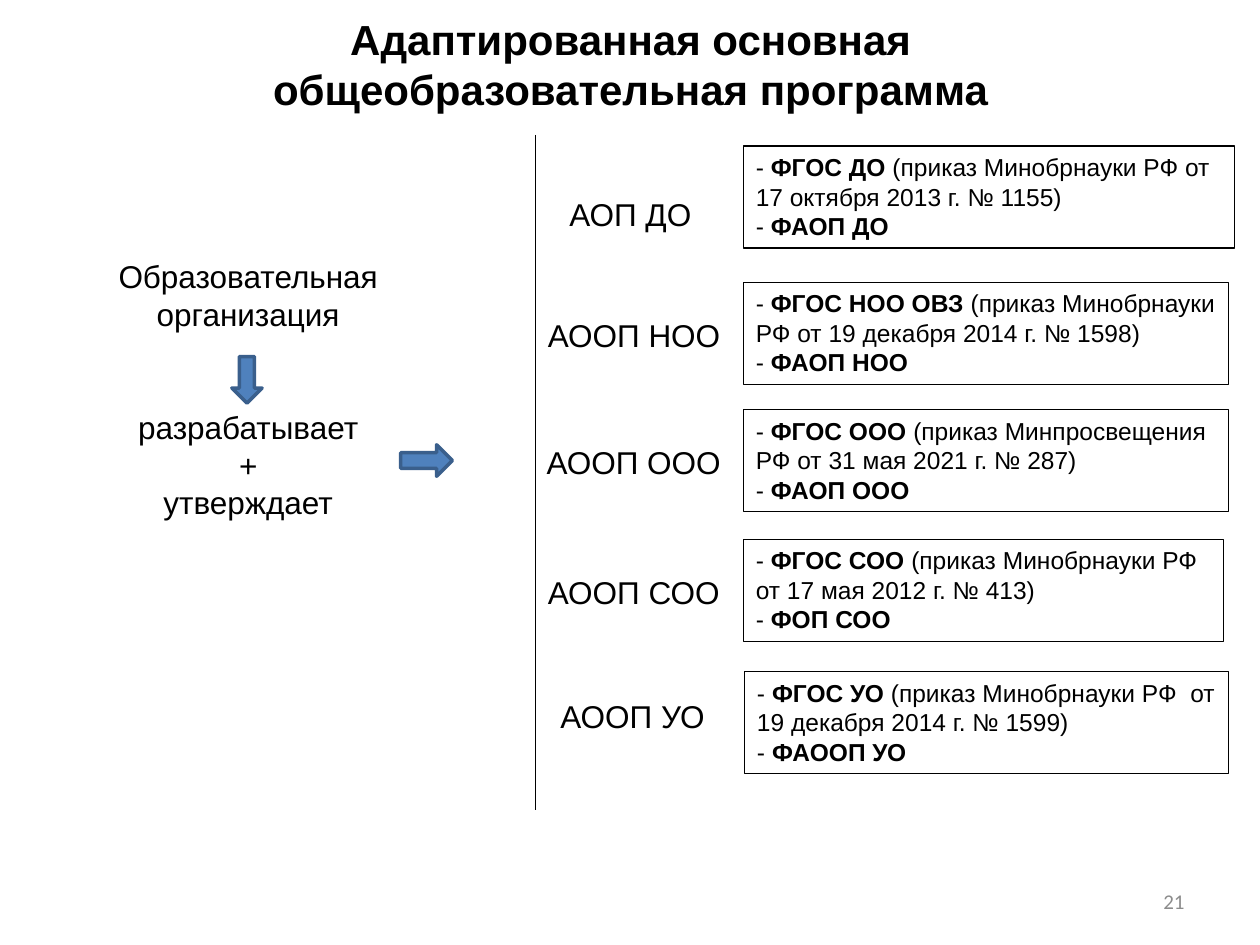
from dataclasses import dataclass

from lxml import etree
from pptx import Presentation
from pptx.dml.color import RGBColor
from pptx.enum.shapes import MSO_CONNECTOR, MSO_SHAPE
from pptx.enum.text import MSO_ANCHOR as Anchor, PP_ALIGN as Align
from pptx.oxml.ns import qn
from pptx.util import Inches, Pt


@dataclass(frozen=True)
class Theme:
    font: str = "Arial"
    number_font: str = "Calibri"
    black: RGBColor = RGBColor(0x00, 0x00, 0x00)
    gray: RGBColor = RGBColor(0x8C, 0x8C, 0x8C)
    arrow_fill: RGBColor = RGBColor(0x4F, 0x81, 0xBD)
    arrow_line: RGBColor = RGBColor(0x3A, 0x5F, 0x8C)
    title: Pt = Pt(24)
    body: Pt = Pt(18)
    detail: Pt = Pt(14)
    number: Pt = Pt(12)
    thin: Pt = Pt(0.75)
    thick: Pt = Pt(2)


theme = Theme()


def add_run(paragraph, text, size, bold=False, color=theme.black, font=theme.font):
    run = paragraph.add_run()
    run.text = text
    run.font.name = font
    run.font.size = size
    run.font.bold = bold
    run.font.color.rgb = color


def add_text_frame(left, top, width, height, anchor=Anchor.TOP):
    box = slide.shapes.add_textbox(Inches(left), Inches(top), Inches(width), Inches(height))
    box.text_frame.word_wrap = True
    box.text_frame.vertical_anchor = anchor
    return box.text_frame


presentation = Presentation()
presentation.slide_width = Inches(10)
presentation.slide_height = Inches(7.5)
slide = presentation.slides.add_slide(presentation.slide_layouts[5])

# Title
title = slide.shapes.title
title.left, title.top = Inches(0.83), Inches(0.05)
title.width, title.height = Inches(8.35), Inches(0.91)
title.text_frame.vertical_anchor = Anchor.MIDDLE
paragraph = title.text_frame.paragraphs[0]
paragraph.alignment = Align.CENTER
add_run(paragraph, "Адаптированная основная общеобразовательная программа", theme.title, bold=True)

# What the organisation does
frame = add_text_frame(0.75, 1.99, 2.44, 2.83)
steps = ["Образовательная организация", "разрабатывает", "+", "утверждает"]
for index, text in enumerate(steps):
    paragraph = frame.paragraphs[0] if index == 0 else frame.add_paragraph()
    paragraph.alignment = Align.CENTER
    if index == 1:
        paragraph.space_before = Pt(43)  # room for the down arrow
    add_run(paragraph, text, theme.body)

# Block arrows
arrows = [
    (MSO_SHAPE.DOWN_ARROW, 1.84, 2.83, 0.24, 0.37),
    (MSO_SHAPE.RIGHT_ARROW, 3.18, 3.53, 0.41, 0.25),
]
for kind, *place in arrows:
    arrow = slide.shapes.add_shape(kind, *map(Inches, place))
    arrow.shadow.inherit = False
    arrow.fill.solid()
    arrow.fill.fore_color.rgb = theme.arrow_fill
    arrow.line.color.rgb = theme.arrow_line
    arrow.line.width = theme.thick

# Divider
divider = slide.shapes.add_connector(
    MSO_CONNECTOR.STRAIGHT, Inches(4.25), Inches(1.07), Inches(4.25), Inches(6.43)
)
divider.line.color.rgb = theme.black
divider.line.width = theme.thin
etree.SubElement(divider._element.spPr, qn("a:effectLst"))

# Programmes: label, its left, top and width; box left, top and width; standard, order, programme
programmes = [
    ("АОП ДО", 4.42, 1.5, 1.25, 5.9, 1.16, 3.9,
     "ФГОС ДО ", "(приказ Минобрнауки РФ от 17 октября 2013 г. № 1155)", "ФАОП ДО"),
    ("АООП НОО", 4.25, 2.46, 1.65, 5.9, 2.24, 3.85,
     "ФГОС НОО ОВЗ ", "(приказ Минобрнауки РФ от 19 декабря 2014 г. № 1598)", "ФАОП НОО"),
    ("АООП ООО", 4.24, 3.47, 1.67, 5.9, 3.25, 3.85,
     "ФГОС ООО ", "(приказ Минпросвещения РФ от 31 мая 2021 г. № 287)", "ФАОП ООО"),
    ("АООП СОО", 4.25, 4.5, 1.65, 5.9, 4.28, 3.81,
     "ФГОС СОО ", "(приказ Минобрнауки РФ от 17 мая 2012 г. № 413)", "ФОП СОО"),
    ("АООП УО", 4.35, 5.48, 1.43, 5.91, 5.33, 3.84,
     "ФГОС УО ", "(приказ Минобрнауки РФ  от 19 декабря 2014 г. № 1599)", "ФАООП УО"),
]
for (label, label_left, label_top, label_width, box_left, box_top, box_width,
     standard, order, programme) in programmes:
    label_frame = add_text_frame(label_left, label_top, label_width, 0.4)
    add_run(label_frame.paragraphs[0], label, theme.body)

    box = slide.shapes.add_shape(
        MSO_SHAPE.RECTANGLE, Inches(box_left), Inches(box_top), Inches(box_width), Inches(0.81)
    )
    box.shadow.inherit = False
    box.fill.background()
    box.line.color.rgb = theme.black
    box.line.width = theme.thin
    frame = box.text_frame
    frame.word_wrap = True
    frame.vertical_anchor = Anchor.TOP
    lines = [
        [("- ", False), (standard, True), (order, False)],
        [("- ", False), (programme, True)],
    ]
    for paragraph, runs in zip((frame.paragraphs[0], frame.add_paragraph()), lines):
        paragraph.alignment = Align.LEFT
        for text, bold in runs:
            add_run(paragraph, text, theme.detail, bold)

# Slide number
frame = add_text_frame(7.17, 6.95, 2.33, 0.4, Anchor.MIDDLE)
frame.paragraphs[0].alignment = Align.RIGHT
add_run(frame.paragraphs[0], "21", theme.number, color=theme.gray, font=theme.number_font)

presentation.save("out.pptx")
